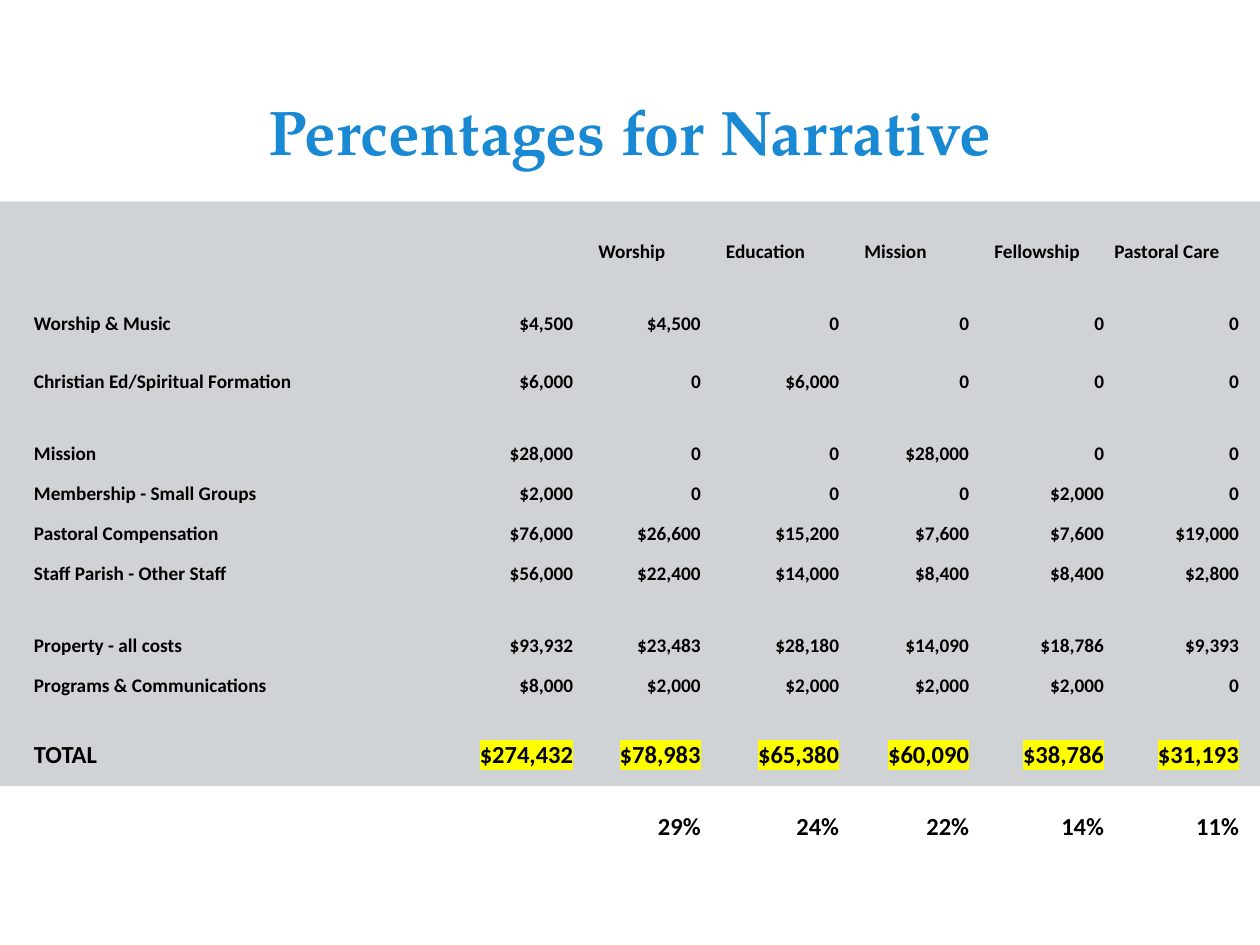
from lxml import etree
from pptx import Presentation
from pptx.dml.color import RGBColor
from pptx.enum import shapes, text
from pptx.oxml.ns import qn
from pptx.util import Cm, Pt

TITLE = "Percentages for Narrative"
HEADERS = ["Worship", "Education", "Mission", "Fellowship\tPastoral Care"]
# label, columns the label spans, total and the five shares
BUDGET = [
    ("Worship & Music", 2, ["$4,500", "$4,500", "0", "0", "0", "0"]),
    ("Christian Ed/Spiritual Formation", 3, ["$6,000", "0", "$6,000", "0", "0", "0"]),
    ("Mission", 1, ["$28,000", "0", "0", "$28,000", "0", "0"]),
    ("Membership - Small Groups", 3, ["$2,000", "0", "0", "0", "$2,000", "0"]),
    ("Pastoral Compensation", 3,
     ["$76,000", "$26,600", "$15,200", "$7,600", "$7,600", "$19,000"]),
    ("Staff Parish - Other Staff", 3,
     ["$56,000", "$22,400", "$14,000", "$8,400", "$8,400", "$2,800"]),
    ("Property - all costs", 2,
     ["$93,932", "$23,483", "$28,180", "$14,090", "$18,786", "$9,393"]),
    ("Programs & Communications", 3,
     ["$8,000", "$2,000", "$2,000", "$2,000", "$2,000", "0"]),
]
TOTALS = ["$274,432", "$78,983", "$65,380", "$60,090", "$38,786", "$31,193"]
PERCENTS = ["29%", "24%", "22%", "14%", "11%"]

COL_WIDTHS = [2.97, 2.77, 2.77, 2.87, 2.57, 2.79, 2.62, 2.72, 2.72]
TALL, MEDIUM, SHORT = 1.45, 1.17, 0.81
ROW_HEIGHTS = [TALL, TALL, MEDIUM, TALL, SHORT, SHORT, SHORT, TALL, SHORT, TALL, TALL]
TOTAL_COL, SHARE_COL = 3, 4
NO_STYLE = "{2D5ABB26-0587-4C30-8999-92F81FD0307C}"
LEFT, RIGHT = text.PP_ALIGN.LEFT, text.PP_ALIGN.RIGHT


def rgb(value):
    return RGBColor.from_string(value)


def style(p, size, font, color, align):
    p.alignment = align
    p.font.size, p.font.bold, p.font.name = Pt(size), True, font
    p.font.color.rgb = rgb(color)


def add_tab(p, position):
    tabs = etree.SubElement(p._p.get_or_add_pPr(), qn("a:tabLst"))
    etree.SubElement(tabs, qn("a:tab"), pos=str(Cm(position)), algn="l")


def highlight(r, color):
    mark = etree.SubElement(r._r.get_or_add_rPr(), qn("a:highlight"))
    etree.SubElement(mark, qn("a:srgbClr"), val=color)


def write(cell, words, size=11, align=RIGHT, mark=None):
    cell.vertical_anchor = text.MSO_ANCHOR.BOTTOM
    p = cell.text_frame.paragraphs[0]
    r = p.add_run()
    r.text = words
    if "\t" in words:
        add_tab(p, 2.42)
    if mark:
        highlight(r, mark)
    style(p, size, "Calibri", "000000", align)


def write_row(row, first_col, values, **look):
    for col, value in enumerate(values, first_col):
        write(table.cell(row, col), value, **look)


prs = Presentation()
prs.slide_width, prs.slide_height = Cm(25.4), Cm(19.05)
s = prs.slides.add_slide(prs.slide_layouts[5])

# Title
title = s.shapes.title
title.left, title.top, title.width, title.height = Cm(0.76), Cm(0.69), Cm(23.88), Cm(2.82)
tf = title.text_frame
tf.text = TITLE
tf.auto_size = text.MSO_AUTO_SIZE.NONE
tf.vertical_anchor = text.MSO_ANCHOR.BOTTOM
style(tf.paragraphs[0], 36, "TeX Gyre Pagella", "1A89D3", text.PP_ALIGN.CENTER)

# Grey band behind the table
band = s.shapes.add_shape(shapes.MSO_SHAPE.RECTANGLE, 0, Cm(4.06), prs.slide_width, Cm(11.79))
band.shadow.inherit = False
band.fill.solid()
band.fill.fore_color.rgb = rgb("D0D3D5")
band.line.fill.background()

# Table grid
table = s.shapes.add_table(len(ROW_HEIGHTS), len(COL_WIDTHS), Cm(0.43), Cm(3.99),
                           Cm(sum(COL_WIDTHS)), Cm(sum(ROW_HEIGHTS))).table
table.first_row = table.horz_banding = False
table._tbl.tblPr.find(qn("a:tableStyleId")).text = NO_STYLE
for column, width in zip(table.columns, COL_WIDTHS):
    column.width = Cm(width)
for row, height in zip(table.rows, ROW_HEIGHTS):
    row.height = Cm(height)
for cell in table.iter_cells():
    cell.fill.background()

# Headings; the last one covers two columns
table.cell(0, 7).merge(table.cell(0, 8))
write_row(0, SHARE_COL, HEADERS, align=LEFT)

# Budget lines
for i, (label, span, amounts) in enumerate(BUDGET, 1):
    if span > 1:
        table.cell(i, 0).merge(table.cell(i, span - 1))
    write(table.cell(i, 0), label, align=LEFT)
    write_row(i, TOTAL_COL, amounts)

# Totals and percentages
total_row = len(BUDGET) + 1
write(table.cell(total_row, 0), "TOTAL", size=14, align=LEFT)
write_row(total_row, TOTAL_COL, TOTALS, size=14, mark="FFFF00")
write_row(total_row + 1, SHARE_COL, PERCENTS, size=14)

prs.save("out.pptx")
